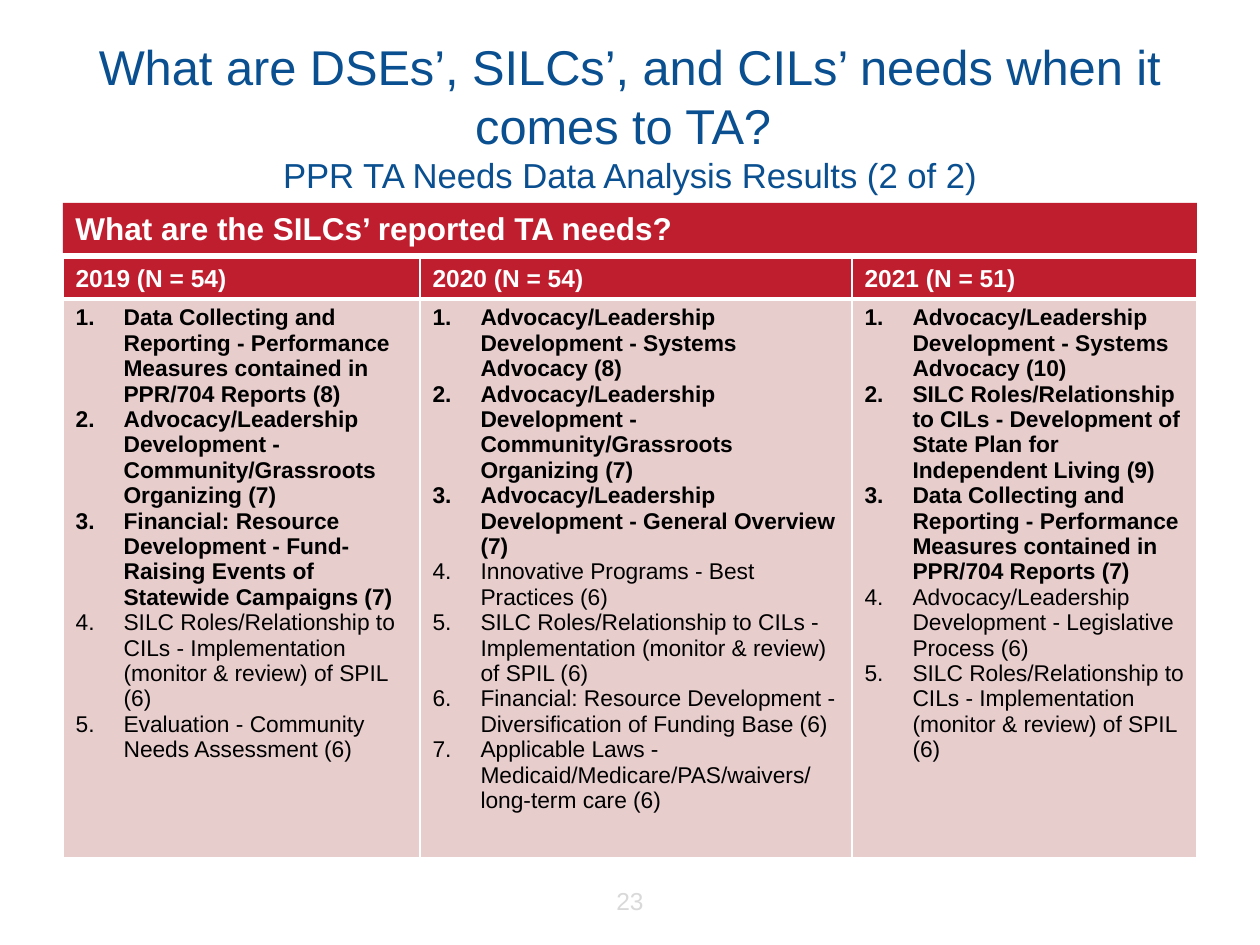
from lxml import etree
from pptx import Presentation
from pptx import util as u
from pptx.dml import color
from pptx.enum import shapes, text
from pptx.oxml import ns

PX = 914400 // 126  # one pixel in EMU
FONT = "Arial"
BLUE, RED, PINK = "0A4F90", "BF1E2E", "E8CDCD"
WHITE, BLACK, GREY = "FFFFFF", "000000", "D9D9D9"
COLUMN_WIDTHS = [357, 432, 345]
ROW_HEIGHTS = [41, 559]
BOLD_ITEMS = 3  # the top needs of each year stand out

YEARS = {
    "2019 (N = 54)": [
        "Data Collecting and Reporting - Performance Measures contained in PPR/704 Reports (8)",
        "Advocacy/Leadership Development - Community/Grassroots Organizing (7)",
        "Financial: Resource Development - Fund-Raising Events of Statewide Campaigns (7)",
        "SILC Roles/Relationship to CILs - Implementation (monitor & review) of SPIL (6) ",
        "Evaluation - Community Needs Assessment (6)",
    ],
    "2020 (N = 54)": [
        "Advocacy/Leadership Development - Systems Advocacy (8)",
        "Advocacy/Leadership Development - Community/Grassroots Organizing (7)",
        "Advocacy/Leadership Development - General Overview (7)",
        "Innovative Programs - Best Practices (6)",
        "SILC Roles/Relationship to CILs - Implementation (monitor & review) of SPIL (6) ",
        "Financial: Resource Development - Diversification of Funding Base (6)",
        "Applicable Laws - Medicaid/Medicare/PAS/waivers/\nlong-term care (6) ",
    ],
    "2021 (N = 51)": [
        "Advocacy/Leadership Development - Systems Advocacy (10)",
        "SILC Roles/Relationship to CILs - Development of State Plan for Independent Living (9)",
        "Data Collecting and Reporting - Performance Measures contained in PPR/704 Reports (7)",
        "Advocacy/Leadership Development - Legislative Process (6)",
        "SILC Roles/Relationship to CILs - Implementation (monitor & review) of SPIL (6)",
    ],
}


def px(*lengths):
    return [u.Emu(length * PX) for length in lengths]


def rgb(value):
    return color.RGBColor.from_string(value)


def add_span(para, words, size, tint, bold=False):
    for index, line in enumerate(words.split("\n")):
        if index:
            para.add_line_break()
        span = para.add_run()
        span.text = line
        span.font.name = FONT
        span.font.size = u.Pt(size)
        span.font.bold = bold
        span.font.color.rgb = rgb(tint)


def number(para, indent):
    props = para._p.get_or_add_pPr()
    props.set("marL", str(indent * PX))
    props.set("indent", str(-indent * PX))
    etree.SubElement(props, ns.qn("a:buFont"), typeface="+mj-lt")
    etree.SubElement(props, ns.qn("a:buAutoNum"), type="arabicPeriod")


def style_cell(cell, fill, bottom=1):
    props = cell._tc.get_or_add_tcPr()
    for side, points in (("L", 1), ("R", 1), ("T", 1), ("B", bottom)):
        line = etree.SubElement(props, ns.qn("a:ln" + side), w=str(u.Pt(points)))
        solid = etree.SubElement(line, ns.qn("a:solidFill"))
        etree.SubElement(solid, ns.qn("a:srgbClr"), val=WHITE)
    cell.fill.solid()
    cell.fill.fore_color.rgb = rgb(fill)


def add_title(page):
    title = page.shapes.title
    title.left, title.top, title.width, title.height = px(63, 38, 1134, 157)
    frame = title.text_frame
    frame.auto_size = text.MSO_AUTO_SIZE.NONE
    frame.vertical_anchor = text.MSO_ANCHOR.MIDDLE
    para = frame.paragraphs[0]
    para.alignment = text.PP_ALIGN.CENTER
    add_span(para, "What are DSEs’, SILCs’, and CILs’ needs when it comes to TA? ", 27.9, BLUE)
    para.add_line_break()
    add_span(para, "PPR TA Needs Data Analysis Results (2 of 2)", 19.8, BLUE)


def add_banner(page):
    banner = page.shapes.add_shape(shapes.MSO_SHAPE.RECTANGLE, *px(63, 203, 1134, 50))
    banner.shadow.inherit = False
    banner.fill.solid()
    banner.fill.fore_color.rgb = rgb(RED)
    banner.line.fill.background()
    frame = banner.text_frame
    frame.word_wrap = True
    frame.vertical_anchor = text.MSO_ANCHOR.TOP
    para = frame.paragraphs[0]
    para.alignment = text.PP_ALIGN.LEFT
    add_span(para, "What are the SILCs’ reported TA needs?", 18, WHITE, True)


def add_needs_table(page):
    area = px(63, 258, sum(COLUMN_WIDTHS), sum(ROW_HEIGHTS))
    table = page.shapes.add_table(len(ROW_HEIGHTS), len(YEARS), *area).table
    for row, height in zip(table.rows, px(*ROW_HEIGHTS)):
        row.height = height
    for column, width in zip(table.columns, px(*COLUMN_WIDTHS)):
        column.width = width

    for index, (year, needs) in enumerate(YEARS.items()):
        head, body = table.cell(0, index), table.cell(1, index)
        style_cell(head, RED, bottom=3)
        head.vertical_anchor = text.MSO_ANCHOR.MIDDLE
        add_span(head.text_frame.paragraphs[0], year, 14, WHITE, True)

        style_cell(body, PINK)
        frame = body.text_frame
        for rank, need in enumerate(needs):
            para = frame.add_paragraph() if rank else frame.paragraphs[0]
            number(para, 48)
            add_span(para, need, 13, BLACK, rank < BOLD_ITEMS)


def add_page_number(page):
    box = page.shapes.add_textbox(*px(483, 876, 294, 50))
    frame = box.text_frame
    frame.word_wrap = True
    frame.vertical_anchor = text.MSO_ANCHOR.MIDDLE
    para = frame.paragraphs[0]
    para.alignment = text.PP_ALIGN.CENTER
    add_span(para, "23", 14, GREY)


def main():
    deck = Presentation()
    deck.slide_width, deck.slide_height = px(1260, 945)
    page = deck.slides.add_slide(deck.slide_layouts[5])  # title only
    add_title(page)
    add_banner(page)
    add_needs_table(page)
    add_page_number(page)
    deck.save("out.pptx")


if __name__ == "__main__":
    main()
